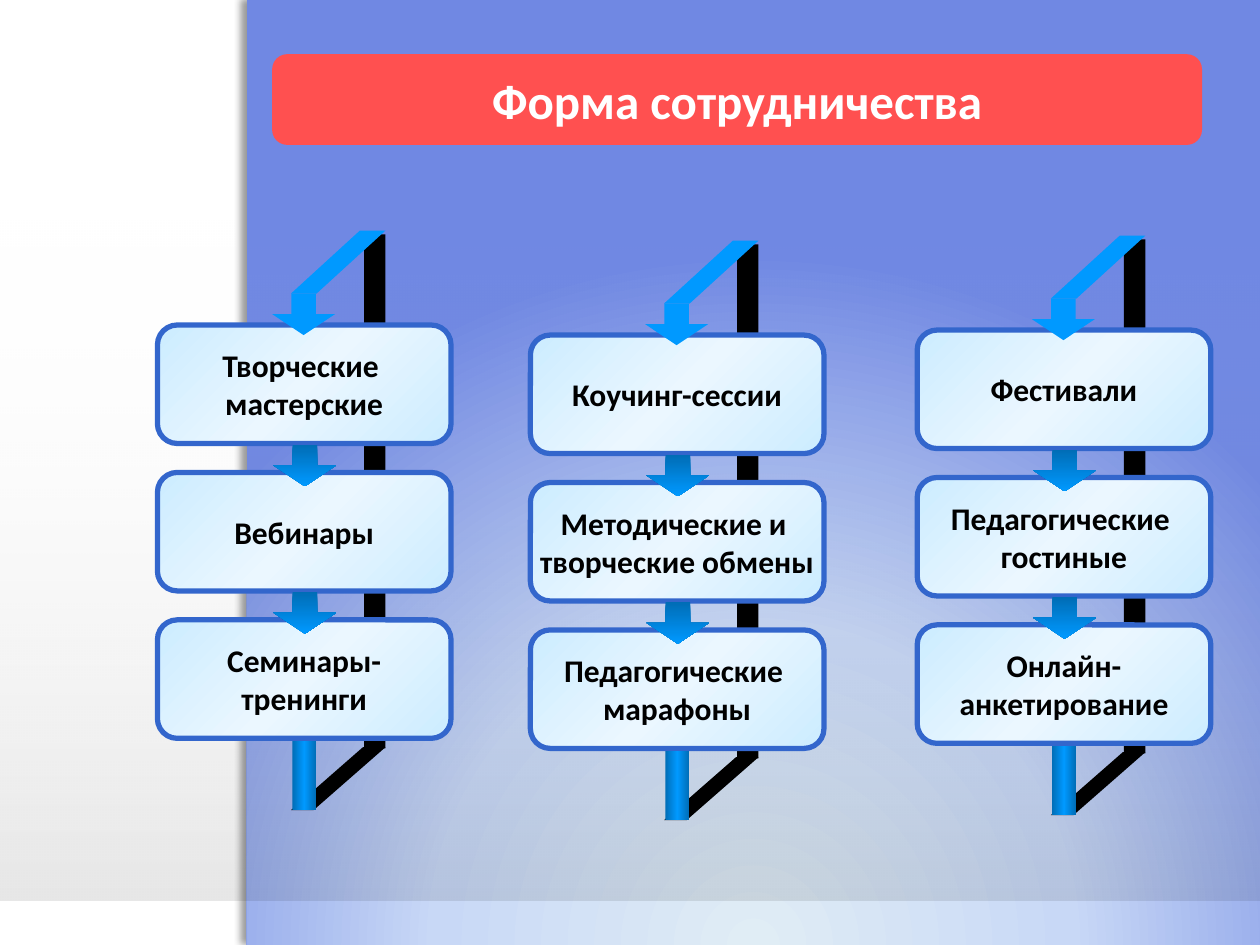
from dataclasses import dataclass

from lxml import etree
from pptx import Presentation
from pptx.dml.color import RGBColor
from pptx.enum.shapes import MSO_SHAPE
from pptx.enum.text import MSO_ANCHOR, PP_ALIGN
from pptx.oxml import parse_xml
from pptx.oxml.ns import nsdecls, qn
from pptx.util import Inches, Pt


@dataclass(frozen=True)
class Gradient:
    stops: tuple[tuple, ...]
    angle: int | None = None


@dataclass(frozen=True)
class Theme:
    font: str = "Calibri"
    title_size: int = 28
    card_size: int = 18
    border_width: int = 3
    white: str = "FFFFFF"
    black: str = "000000"
    banner: str = "FF5050"
    border: str = "3366CC"
    arrow: str = "0099FF"
    panel: Gradient = Gradient(((0, "E0EDF5"), (46, "C8D8F6"), (100, "7088E3")))
    haze: Gradient = Gradient(((0, "000000", 10), (100, "FFFFFF", 0)), 270)
    card: Gradient = Gradient(((0, "CCECFF"), (50, "EBF7FF"), (100, "CCECFF")), 45)
    step: Gradient = Gradient(((0, "006DB6"), (100, "0099FF")), 90)
    tail: Gradient = Gradient(((0, "006DB6"), (50, "0099FF"), (100, "006DB6")), 0)


@dataclass(frozen=True)
class Box:
    left: float
    top: float
    width: float
    height: float


@dataclass(frozen=True)
class Chain:
    left: float
    top: float
    cards: tuple[str, ...]


THEME = Theme()
CARD_PITCH = 1.17
ARROW_ADJUSTMENTS = (0.389, 0.505)
CHAINS = (
    Chain(1.25, 2.58, ("Творческие \nмастерские", "Вебинары", "Семинары-\nтренинги")),
    Chain(4.21, 2.66, ("Коучинг-сессии", "Методические и \nтворческие обмены",
                       "Педагогические \nмарафоны")),
    Chain(7.28, 2.62, ("Фестивали", "Педагогические \nгостиные",
                       "Онлайн-\nанкетирование")),
)


def apply_gradient(shape, gradient: Gradient) -> None:
    shape.fill.solid()
    solid = shape._element.spPr.find(qn("a:solidFill"))
    filled = parse_xml(f'<a:gradFill {nsdecls("a")} rotWithShape="1"><a:gsLst/></a:gradFill>')
    for position, color, *opacity in gradient.stops:
        stop = etree.SubElement(filled[0], qn("a:gs"), pos=str(position * 1000))
        tint = etree.SubElement(stop, qn("a:srgbClr"), val=color)
        for percent in opacity:
            etree.SubElement(tint, qn("a:alpha"), val=str(percent * 1000))
    if gradient.angle is None:
        circle = etree.SubElement(filled, qn("a:path"), path="circle")
        etree.SubElement(circle, qn("a:fillToRect"),
                         l="50000", t="130000", r="50000", b="-30000")
    else:
        etree.SubElement(filled, qn("a:lin"), ang=str(gradient.angle * 60000), scaled="0")
    solid.getparent().replace(solid, filled)


def add_block(shapes, kind: MSO_SHAPE, box: Box, fill: str | Gradient,
              adjustments: tuple[float, ...] = ()):
    block = shapes.add_shape(kind, Inches(box.left), Inches(box.top),
                             Inches(box.width), Inches(box.height))
    block.shadow.inherit = False
    block.line.fill.background()
    for index, value in enumerate(adjustments):
        block.adjustments[index] = value
    if isinstance(fill, Gradient):
        apply_gradient(block, fill)
    else:
        block.fill.solid()
        block.fill.fore_color.rgb = RGBColor.from_string(fill)
    return block


def write_label(block, label: str, size: int, color: str, wrap: bool) -> None:
    frame = block.text_frame
    frame.text = label
    frame.word_wrap = wrap
    frame.vertical_anchor = MSO_ANCHOR.MIDDLE
    for paragraph in frame.paragraphs:
        paragraph.alignment = PP_ALIGN.CENTER
        for run in paragraph.runs:
            run.font.name = THEME.font
            run.font.size = Pt(size)
            run.font.bold = True
            run.font.color.rgb = RGBColor.from_string(color)


def add_panel(shapes) -> None:
    panel = add_block(shapes, MSO_SHAPE.RECTANGLE, Box(1.96, 0, 8.04, 7.5), THEME.panel)
    effects = panel._element.spPr.find(qn("a:effectLst"))
    shadow = etree.SubElement(effects, qn("a:outerShdw"), blurRad=str(Pt(4)),
                              dist=str(Pt(3)), dir=str(180 * 60000))
    tint = etree.SubElement(shadow, qn("a:srgbClr"), val=THEME.black)
    etree.SubElement(tint, qn("a:alpha"), val="40000")


def add_chain(shapes, chain: Chain) -> None:
    members = shapes.add_group_shape().shapes

    def place(kind: MSO_SHAPE, dx: float, dy: float, width: float, height: float,
              fill: str | Gradient, adjustments: tuple[float, ...] = ()):
        box = Box(chain.left + dx, chain.top + dy, width, height)
        return add_block(members, kind, box, fill, adjustments)

    def place_card(index: int) -> None:
        card = place(MSO_SHAPE.ROUNDED_RECTANGLE, 0, index * CARD_PITCH, 2.33, 0.94,
                     THEME.card, (0.167,))
        card.line.color.rgb = RGBColor.from_string(THEME.border)
        card.line.width = Pt(THEME.border_width)
        write_label(card, chain.cards[index], THEME.card_size, THEME.black, False)

    place(MSO_SHAPE.RECTANGLE, 1.64, -0.72, 0.17, 4.08, THEME.black)
    place(MSO_SHAPE.PARALLELOGRAM, 1.06, 3.35, 0.75, 0.5, THEME.black, (1.142,))
    place_card(0)
    place(MSO_SHAPE.PARALLELOGRAM, 1.06, -0.75, 0.75, 0.5, THEME.arrow, (1.094,))
    place(MSO_SHAPE.DOWN_ARROW, 0.91, -0.25, 0.5, 0.33, THEME.arrow, ARROW_ADJUSTMENTS)
    for index in range(1, len(chain.cards)):
        place_card(index)
    for index in range(len(chain.cards) - 1):
        place(MSO_SHAPE.DOWN_ARROW, 0.92, 0.95 + index * CARD_PITCH, 0.5, 0.33,
              THEME.step, ARROW_ADJUSTMENTS)
    place(MSO_SHAPE.RECTANGLE, 1.07, 3.3, 0.19, 0.55, THEME.tail)


def main() -> None:
    deck = Presentation()
    deck.slide_width, deck.slide_height = Inches(10), Inches(7.5)
    shapes = deck.slides.add_slide(deck.slide_layouts[6]).shapes
    add_panel(shapes)
    banner = add_block(shapes, MSO_SHAPE.ROUNDED_RECTANGLE,
                       Box(2.16, 0.43, 7.38, 0.72), THEME.banner)
    write_label(banner, "Форма сотрудничества", THEME.title_size, THEME.white, True)
    add_block(shapes, MSO_SHAPE.RECTANGLE, Box(0, 1.64, 10, 5.51), THEME.haze)
    for chain in CHAINS:
        add_chain(shapes, chain)
    deck.save("out.pptx")


if __name__ == "__main__":
    main()
